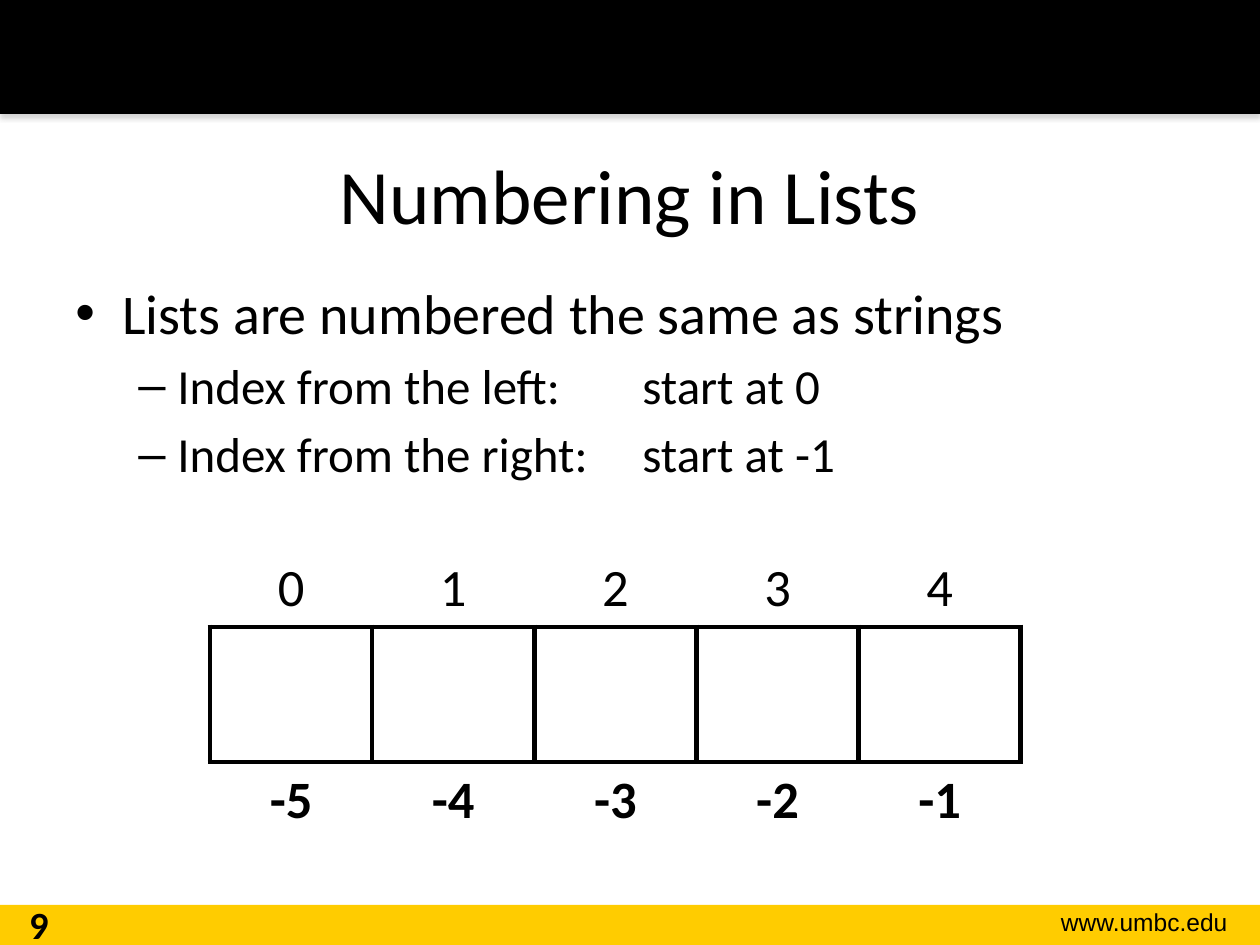
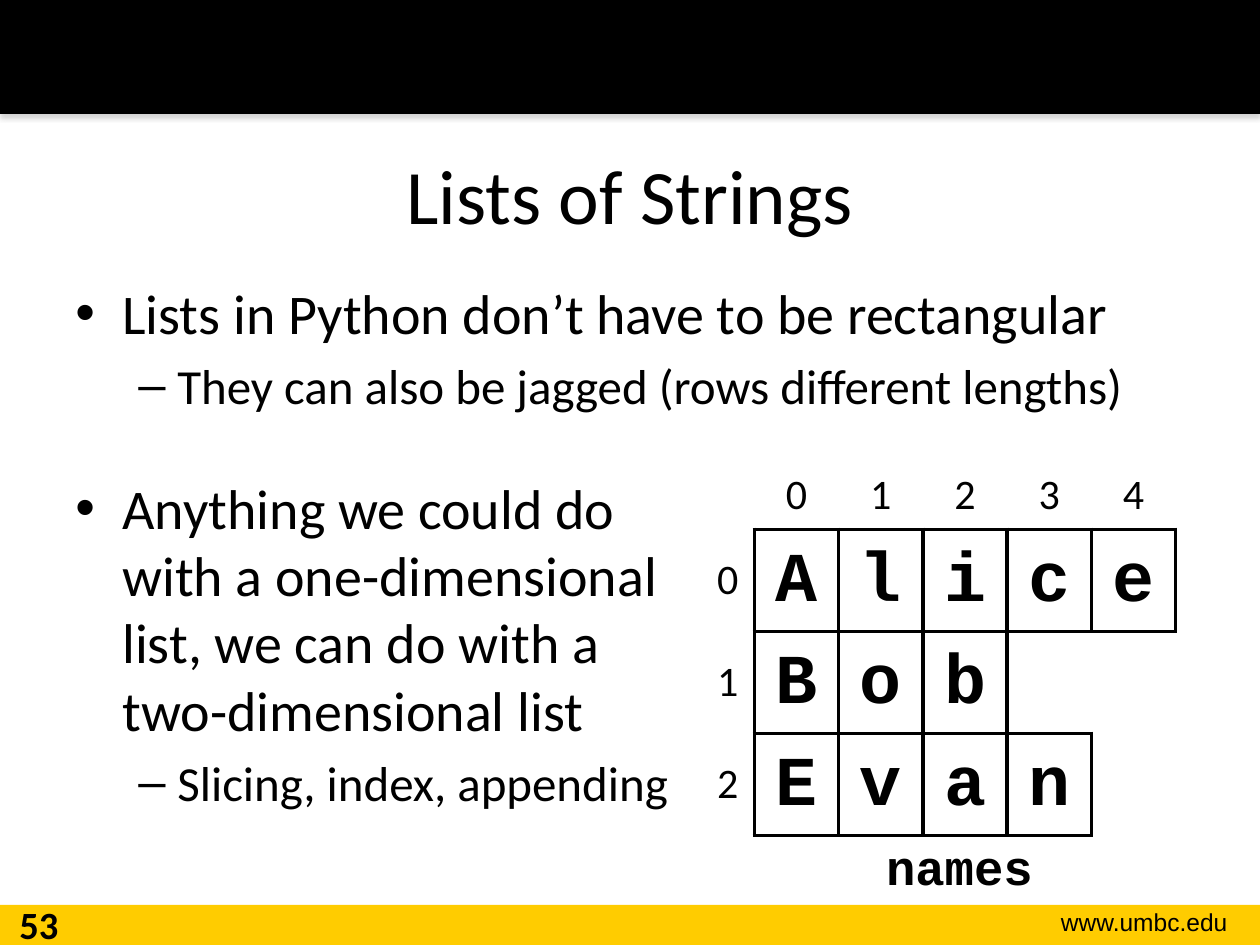
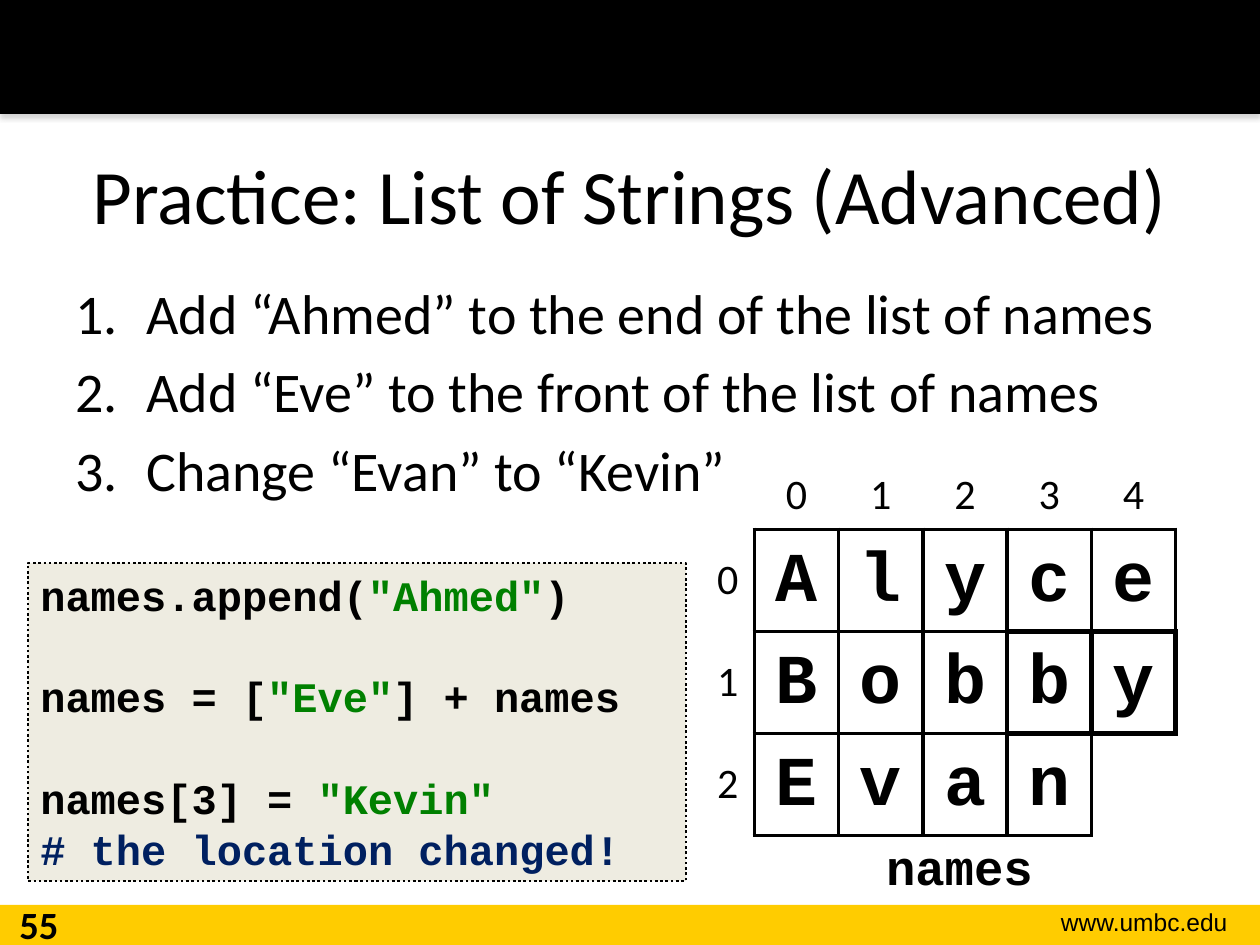
from dataclasses import dataclass, replace

from lxml.etree import SubElement
from pptx import Presentation
from pptx.dml.color import RGBColor
from pptx.enum.dml import MSO_LINE
from pptx.enum.shapes import MSO_SHAPE
from pptx.enum.text import MSO_ANCHOR, PP_ALIGN
from pptx.oxml.ns import qn
from pptx.util import Emu, Pt

BLACK = RGBColor(0x00, 0x00, 0x00)
WHITE = RGBColor(0xFF, 0xFF, 0xFF)
GOLD = RGBColor(0xFF, 0xCC, 0x00)
CREAM = RGBColor(0xEE, 0xEC, 0xE1)
STRING_GREEN = RGBColor(0x00, 0x80, 0x00)
COMMENT_NAVY = RGBColor(0x00, 0x20, 0x60)

SANS = "Calibri"
MONO = "Courier New"
EMU_PER_PX = 914400 / 126
WIDTH, HEIGHT = 1260, 945
CODE_LINE = Pt(29)


def px(length):
    return Emu(round(length * EMU_PER_PX))


@dataclass(frozen=True)
class CellStyle:
    size: int = 18
    font: str = SANS
    bold: bool = False
    align: PP_ALIGN = PP_ALIGN.CENTER
    anchor: MSO_ANCHOR = MSO_ANCHOR.BOTTOM
    border: float = 0


EMPTY = CellStyle()
BOX = CellStyle(border=3)
LEFT_INDEX = CellStyle(30)
RIGHT_INDEX = CellStyle(30, bold=True, anchor=MSO_ANCHOR.TOP)
COLUMN_INDEX = CellStyle(24)
ROW_INDEX = CellStyle(24, align=PP_ALIGN.RIGHT, anchor=MSO_ANCHOR.MIDDLE)
LETTER = CellStyle(40, MONO, True, border=2.25)
ADDED_LETTER = replace(LETTER, border=3)


@dataclass(frozen=True)
class Level:
    size: int
    margin: int
    hanging: int
    bullet: str = ""


POINT = Level(32, 47, 47, "•")
SUBPOINT = Level(28, 102, 39, "–")
STEP = Level(32, 71, 71)


def format_font(font, size, name=SANS, bold=False, color=BLACK):
    font.size = Pt(size)
    font.name = name
    font.bold = bold
    font.color.rgb = color


def add_label(slide, box, text, size, font=SANS, bold=False,
              align=PP_ALIGN.CENTER, anchor=MSO_ANCHOR.TOP):
    frame = slide.shapes.add_textbox(*map(px, box)).text_frame
    frame.word_wrap = True
    frame.vertical_anchor = anchor
    frame.text = text
    paragraph = frame.paragraphs[0]
    paragraph.alignment = align
    format_font(paragraph.runs[0].font, size, font, bold)


def add_block(slide, box, fill):
    block = slide.shapes.add_shape(MSO_SHAPE.RECTANGLE, *map(px, box))
    block.shadow.inherit = False
    block.fill.solid()
    block.fill.fore_color.rgb = fill
    block.line.fill.background()
    return block


def add_soft_shadow(block):
    effects = block._element.spPr.find(qn("a:effectLst"))
    shadow = SubElement(effects, qn("a:outerShdw"), blurRad="40000",
                        dist="23000", dir="5400000", rotWithShape="0")
    gray = SubElement(shadow, qn("a:srgbClr"), val="808080")
    SubElement(gray, qn("a:alpha"), val="35000")


def add_page(deck, title, number):
    slide = deck.slides.add_slide(deck.slide_layouts[6])
    add_block(slide, (0, 905, WIDTH, 40), GOLD)
    add_soft_shadow(add_block(slide, (0, 0, WIDTH, 114), BLACK))
    add_label(slide, (989, 901, 251, 43), "www.umbc.edu", 14, "Arial",
              align=PP_ALIGN.RIGHT)
    add_label(slide, (63, 115, 1134, 157), title, 44, anchor=MSO_ANCHOR.MIDDLE)
    add_label(slide, (0, 895, 78, 50), str(number), 22, bold=True)
    return slide


def add_bullet(paragraph, level):
    properties = paragraph._p.get_or_add_pPr()
    properties.set("marL", str(px(level.margin)))
    properties.set("indent", str(-px(level.hanging)))
    properties.set("defTabSz", str(px(63)))
    if level.bullet:
        SubElement(properties, qn("a:buFont"), typeface="Arial")
        SubElement(properties, qn("a:buChar"), char=level.bullet)
    else:
        SubElement(properties, qn("a:buAutoNum"), type="arabicPeriod")


def add_body(slide, entries):
    frame = slide.shapes.add_textbox(*map(px, (63, 272, 1134, 622))).text_frame
    frame.word_wrap = True
    for position, (level, text, *gap) in enumerate(entries):
        paragraph = frame.add_paragraph() if position else frame.paragraphs[0]
        paragraph.text = text
        add_bullet(paragraph, level)
        if position:
            paragraph.space_before = Pt(gap[0] if gap else level.size * 0.2)
        for run in paragraph.runs:
            format_font(run.font, level.size)


def draw_edge(cell, side, weight):
    edge = SubElement(cell._tc.get_or_add_tcPr(), qn(f"a:ln{side}"))
    if not weight:
        SubElement(edge, qn("a:noFill"))
        return
    edge.set("w", str(Pt(weight)))
    SubElement(SubElement(edge, qn("a:solidFill")), qn("a:srgbClr"), val=str(BLACK))


def fill_cell(cell, text, style, insets):
    if insets:
        cell.margin_left = cell.margin_right = px(insets[0])
        cell.margin_top = cell.margin_bottom = px(insets[1])
    cell.vertical_anchor = style.anchor
    if text:
        cell.text = text
        paragraph = cell.text_frame.paragraphs[0]
        paragraph.alignment = style.align
        format_font(paragraph.runs[0].font, style.size, style.font, style.bold)


def add_grid(slide, box, heights, rows, insets=None):
    holder = slide.shapes.add_table(len(rows), len(rows[0]), *map(px, box))
    table = holder.table
    table.first_row = table.horz_banding = False
    for row, height in zip(table.rows, heights):
        row.height = px(height)
    holder.height = px(box[3])
    borders = {(r, c): style.border for r, cells in enumerate(rows)
               for c, (_, style) in enumerate(cells)}
    for (r, c), border in borders.items():
        cell = table.cell(r, c)
        neighbours = {"L": (r, c - 1), "R": (r, c + 1), "T": (r - 1, c), "B": (r + 1, c)}
        for side, neighbour in neighbours.items():
            draw_edge(cell, side, max(border, borders.get(neighbour, 0)))
        if r:
            cell.fill.solid()
            cell.fill.fore_color.rgb = WHITE
        else:
            cell.fill.background()
        fill_cell(cell, *rows[r][c], insets)


def add_index_grid(slide, count):
    rows = [
        [(str(i), LEFT_INDEX) for i in range(count)],
        [("", BOX)] * count,
        [(str(i - count), RIGHT_INDEX) for i in range(count)],
    ]
    add_grid(slide, (210, 533, 811, 364), (94, 135, 135), rows)


def add_names_grid(slide, names, added=()):
    columns = 5
    rows = [[("", EMPTY), *((str(i), COLUMN_INDEX) for i in range(columns)), ("", EMPTY)]]
    for r, name in enumerate(names):
        letters = [(letter, ADDED_LETTER if (r, c) in added else LETTER)
                   for c, letter in enumerate(name)]
        padding = [("", EMPTY)] * (columns + 1 - len(name))
        rows.append([(str(r), ROW_INDEX), *letters, *padding])
    add_grid(slide, (670, 461, 590, 369), [67] * len(rows), rows, (16, 9))


def add_names_label(slide):
    add_label(slide, (828, 830, 263, 72), "names", 28, MONO, True)


def add_code(slide, box, lines):
    block = add_block(slide, box, CREAM)
    block.line.color.rgb = BLACK
    block.line.width = Pt(1.5)
    block.line.dash_style = MSO_LINE.ROUND_DOT
    frame = block.text_frame
    frame.word_wrap = True
    frame.vertical_anchor = MSO_ANCHOR.TOP
    for position, (blank_before, pieces) in enumerate(lines):
        paragraph = frame.add_paragraph() if position else frame.paragraphs[0]
        paragraph.alignment = PP_ALIGN.LEFT
        paragraph.line_spacing = CODE_LINE
        if blank_before:
            paragraph.space_before = CODE_LINE
        for text, color in pieces:
            run = paragraph.add_run()
            run.text = text
            format_font(run.font, 24, MONO, True, color)


def main():
    deck = Presentation()
    deck.slide_width, deck.slide_height = px(WIDTH), px(HEIGHT)

    numbering = add_page(deck, "Numbering in Lists", 9)
    add_body(numbering, [
        (POINT, "Lists are numbered the same as strings"),
        (SUBPOINT, "Index from the left:\t\tstart at 0"),
        (SUBPOINT, "Index from the right:\tstart at -1"),
    ])
    add_index_grid(numbering, 5)

    strings = add_page(deck, "Lists of Strings", 53)
    add_body(strings, [
        (POINT, "Lists in Python don’t have to be rectangular"),
        (SUBPOINT, "They can also be jagged (rows different lengths)"),
        (POINT, "Anything we could do\vwith a one-dimensional\v"
                "list, we can do with a\vtwo-dimensional list", 34),
        (SUBPOINT, "Slicing, index, appending"),
    ])
    add_names_grid(strings, ["Alice", "Bob", "Evan"])
    add_names_label(strings)

    practice = add_page(deck, "Practice: List of Strings (Advanced)", 55)
    add_body(practice, [
        (STEP, "Add “Ahmed” to the end of the list of names"),
        (STEP, "Add “Eve” to the front of the list of names"),
        (STEP, "Change “Evan” to “Kevin”"),
    ])
    add_names_grid(practice, ["Alyce", "Bobby", "Evan"], {(1, 3), (1, 4)})
    add_code(practice, (28, 563, 658, 318), [
        (False, [("names.append(", BLACK), ('"Ahmed"', STRING_GREEN), (")", BLACK)]),
        (True, [("names = [", BLACK), ('"Eve"', STRING_GREEN), ("] + names", BLACK)]),
        (True, [("names[3] = ", BLACK), ('"Kevin"', STRING_GREEN)]),
        (False, [("# the location changed!", COMMENT_NAVY)]),
    ])
    add_names_label(practice)

    deck.save("out.pptx")


if __name__ == "__main__":
    main()
